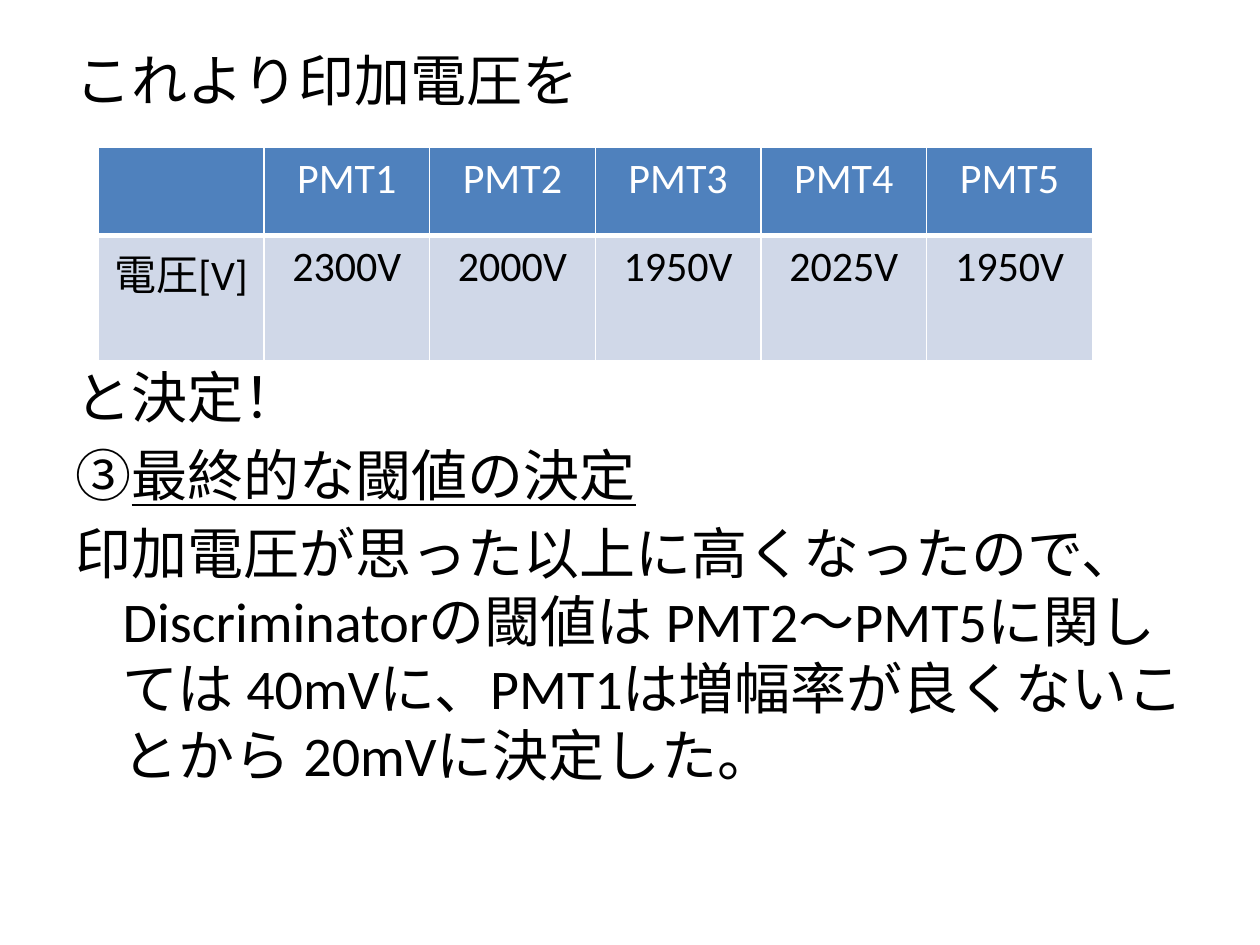
from lxml.etree import SubElement
from pptx import Presentation
from pptx.dml.color import RGBColor
from pptx.enum.text import MSO_AUTO_SIZE, PP_ALIGN
from pptx.oxml.ns import qn
from pptx.util import Cm, Pt

FONT = "Calibri"
BLACK, WHITE = "000000", "FFFFFF"
HEADER_FILL, VALUE_FILL = "4F81BD", "D0D8E8"

# Each paragraph: space before in points, then (text, underlined) runs
TABLE_GAP = 142.5
PARAGRAPHS = [
    (6.4, [("これより印加電圧を", False)]),
    (TABLE_GAP, [("と決定！", False)]),
    (6.4, [("③", False), ("最終的な閾値の決定", True)]),
    (6.4, [("印加電圧が思った以上に高くなったので、Discriminatorの閾値は "
            "PMT2～PMT5に関しては 40mVに、PMT1は増幅率が良くないことから "
            "20mVに決定した。", False)]),
]
VOLTAGES = [
    ["", "PMT1", "PMT2", "PMT3", "PMT4", "PMT5"],
    ["電圧[V]", "2300V", "2000V", "1950V", "2025V", "1950V"],
]


def rgb(color):
    return RGBColor.from_string(color)


def format_font(paragraph, size, color):
    font = paragraph.font
    font.name, font.size, font.bold = FONT, Pt(size), False
    font.color.rgb = rgb(color)


def fill_body(body):
    body.left, body.top, body.width, body.height = Cm(1.27), Cm(0.79), Cm(22.86), Cm(16.23)
    frame = body.text_frame
    frame.auto_size = MSO_AUTO_SIZE.NONE
    for index, (space_before, runs) in enumerate(PARAGRAPHS):
        paragraph = frame.add_paragraph() if index else frame.paragraphs[0]
        paragraph.space_before = Pt(space_before)
        # Hanging indent without a bullet
        properties = paragraph._p.get_or_add_pPr()
        properties.set("marL", str(Cm(0.95)))
        properties.set("indent", str(Cm(-0.95)))
        SubElement(properties, qn("a:buNone"))
        format_font(paragraph, 32, BLACK)
        for text, underlined in runs:
            run = paragraph.add_run()
            run.text = text
            if underlined:
                run.font.underline = True


def add_borders(cell, widths):
    properties = cell._tc.get_or_add_tcPr()
    for side, width in zip("LRTB", widths):
        line = SubElement(properties, qn(f"a:ln{side}"), w=str(Pt(width)))
        fill = SubElement(line, qn("a:solidFill"))
        SubElement(fill, qn("a:srgbClr"), val=WHITE)


def add_voltage_table(slide):
    frame = slide.shapes.add_table(len(VOLTAGES), len(VOLTAGES[0]),
                                   Cm(1.98), Cm(2.97), Cm(20.04), Cm(3.76))
    table = frame.table
    for row, height in zip(table.rows, (1.78, 1.98)):
        row.height = Cm(height)
    for row_index, texts in enumerate(VOLTAGES):
        is_header = row_index == 0
        for column_index, text in enumerate(texts):
            cell = table.cell(row_index, column_index)
            add_borders(cell, (1, 1, 1, 3) if is_header else (1, 1, 1, 1))
            cell.fill.solid()
            cell.fill.fore_color.rgb = rgb(HEADER_FILL if is_header else VALUE_FILL)
            paragraph = cell.text_frame.paragraphs[0]
            paragraph.alignment = PP_ALIGN.CENTER
            format_font(paragraph, 24, WHITE if is_header else BLACK)
            if text:
                paragraph.add_run().text = text


def main():
    presentation = Presentation()
    presentation.slide_width, presentation.slide_height = Cm(25.4), Cm(19.05)
    # The slide has body text but no title
    slide = presentation.slides.add_slide(presentation.slide_layouts[1])
    title = slide.shapes.title.element
    title.getparent().remove(title)
    fill_body(slide.placeholders[1])
    add_voltage_table(slide)
    presentation.save("out.pptx")


if __name__ == "__main__":
    main()
